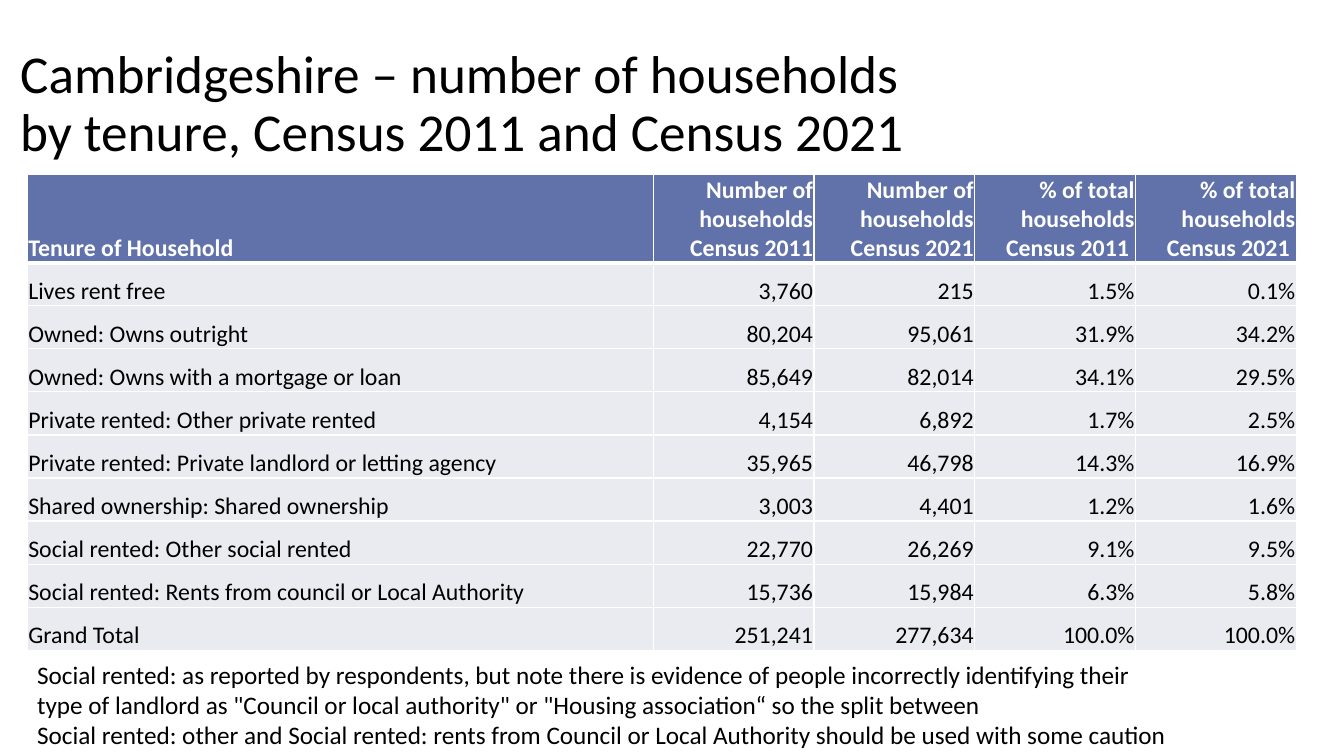
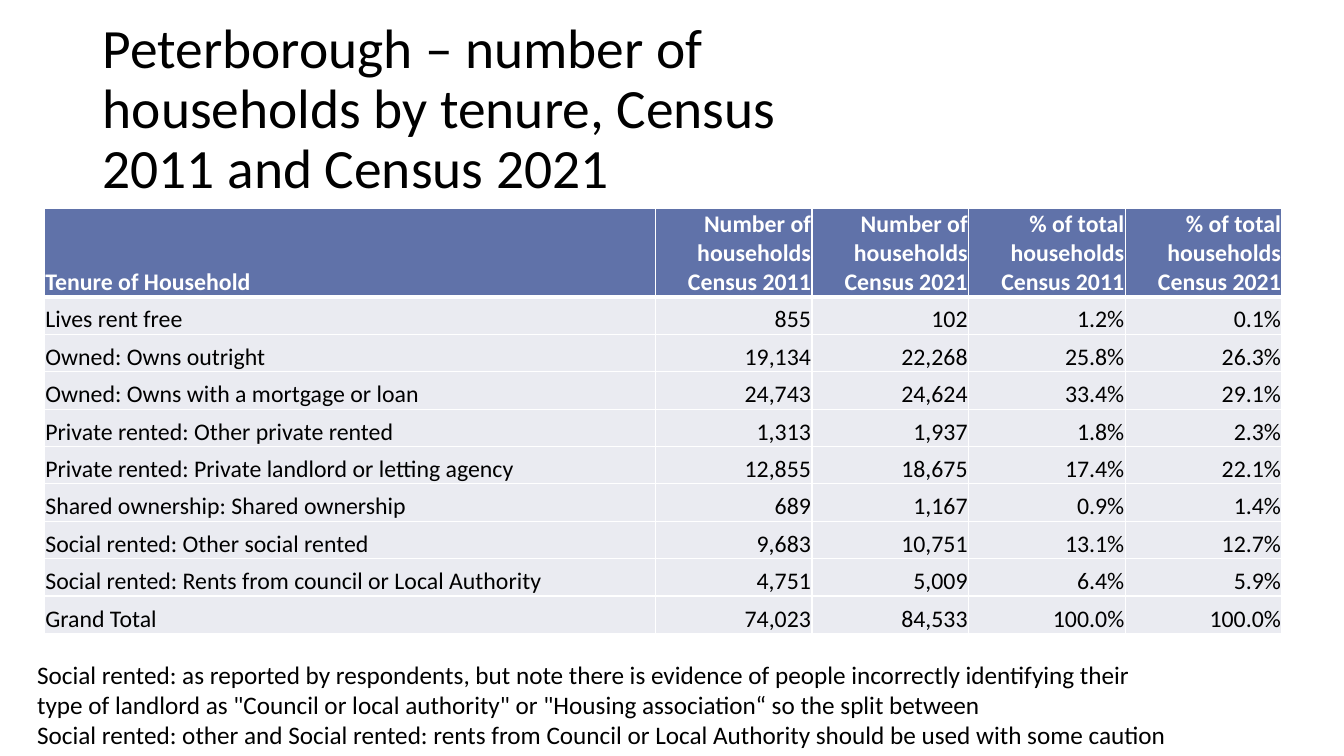
"""Build two slides of household tenure tables from Census 2011 and 2021."""
from pptx import Presentation
from pptx.dml.color import RGBColor
from pptx.enum.text import MSO_ANCHOR, MSO_AUTO_SIZE, PP_ALIGN
from pptx.oxml import parse_xml
from pptx.oxml.ns import nsdecls
from pptx.util import Inches, Pt

HUES = {"head": "6072A9", "body": "EAEBF1", "ink": "000000", "white": "FFFFFF"}
FONT = "Calibri"
TENURES = [
    "Lives rent free",
    "Owned: Owns outright",
    "Owned: Owns with a mortgage or loan",
    "Private rented: Other private rented",
    "Private rented: Private landlord or letting agency",
    "Shared ownership: Shared ownership",
    "Social rented: Other social rented",
    "Social rented: Rents from council or Local Authority",
]
HEADS = [
    "Tenure of Household",
    "Number of households Census 2011",
    "Number of households Census 2021",
    "% of total households Census 2011",
    "% of total households Census 2021",
]
NOTE = """Social rented: as reported by respondents, but note there is evidence of people incorrectly identifying their
type of landlord as "Council or local authority" or "Housing association“ so the split between
Social rented: other and Social rented: rents from Council or Local Authority should be used with some caution"""
AREAS = [
    {
        "name": "Cambridgeshire", "size": 38, "tail": " ",
        "title": (0.75, 3.87, 68.4, 20.13), "spot": (2.03, 23.07),
        "cols": (46.58, 11.96), "rows": (11.33, 5.7),
        "old": [3760, 80204, 85649, 4154, 35965, 3003, 22770, 15736],
        "new": [215, 95061, 82014, 6892, 46798, 4401, 26269, 15984],
    },
    {
        "name": "Peterborough", "size": 39.6, "tail": "",
        "title": (6.9, 4.53, 56.85, 20.13), "spot": (3.3, 27.6),
        "cols": (45.46, 11.66), "rows": (9.87, 4.95),
        "old": [855, 19134, 24743, 1313, 12855, 689, 9683, 4751],
        "new": [102, 22268, 24624, 1937, 18675, 1167, 10751, 5009],
    },
]

deck = Presentation()
deck.slide_width, deck.slide_height = Inches(13.33), Inches(7.5)
COL, ROW = deck.slide_width / 100, deck.slide_height / 100


def ink(para, size, hue="ink", bold=False):
    font = para.font
    for run in para.runs:
        font = run.font
        font.name, font.size, font.bold = FONT, Pt(size), bold
        font.color.rgb = RGBColor.from_string(HUES[hue])


def edge(cell, side, width):
    cell._tc.get_or_add_tcPr().append(parse_xml(
        f'<a:ln{side} {nsdecls("a")} w="{Pt(width)}"><a:solidFill>'
        f'<a:srgbClr val="{HUES["white"]}"/></a:solidFill></a:ln{side}>'))


for area in AREAS:
    slide = deck.slides.add_slide(deck.slide_layouts[5])
    title = slide.shapes.title
    left, top, wide, high = area["title"]
    title.left, title.width = int(left * COL), int(wide * COL)
    title.top, title.height = int(top * ROW), int(high * ROW)
    frame = title.text_frame
    frame.text = f"{area['name']} – number of households by tenure, Census 2011 and Census 2021"
    frame.auto_size = MSO_AUTO_SIZE.NONE
    frame.vertical_anchor = MSO_ANCHOR.MIDDLE
    para = frame.paragraphs[0]
    para.alignment, para.line_spacing = PP_ALIGN.LEFT, 0.9
    ink(para, area["size"])

    sums = sum(area["old"]), sum(area["new"])
    pairs = [*zip(TENURES, area["old"], area["new"]), ("Grand Total", *sums)]
    grid = [HEADS[:3] + [head + area["tail"] for head in HEADS[3:]]]
    for label, old, new in pairs:
        grid.append([label, f"{old:,}", f"{new:,}",
                     f"{old / sums[0]:.1%}", f"{new / sums[1]:.1%}"])

    wides = [area["cols"][0]] + [area["cols"][1]] * 4
    highs = [area["rows"][0]] + [area["rows"][1]] * len(pairs)
    left, top = area["spot"]
    table = slide.shapes.add_table(
        len(grid), len(HEADS), int(left * COL), int(top * ROW),
        int(sum(wides) * COL), int(sum(highs) * ROW)).table
    table.horz_banding = False
    for col, wide in zip(table.columns, wides):
        col.width = int(wide * COL)
    for row, high in zip(table.rows, highs):
        row.height = int(high * ROW)
    for r, texts in enumerate(grid):
        first = r == 0
        for c, text in enumerate(texts):
            cell = table.cell(r, c)
            cell.text = text
            cell.vertical_anchor = MSO_ANCHOR.BOTTOM
            cell.margin_left = cell.margin_right = cell.margin_top = Inches(0.01)
            cell.margin_bottom = 0
            edge(cell, "L", 1)
            edge(cell, "R", 1)
            edge(cell, "T", 3 if r == 1 else 1)
            edge(cell, "B", 3 if first else 1)
            cell.fill.solid()
            cell.fill.fore_color.rgb = RGBColor.from_string(HUES["head" if first else "body"])
            para = cell.text_frame.paragraphs[0]
            para.alignment = PP_ALIGN.RIGHT if c else PP_ALIGN.LEFT
            ink(para, 17, "white" if first else "ink", first)

    note = slide.shapes.add_textbox(
        int(2.03 * COL), int(86.53 * ROW), int(91.37 * COL), int(13.47 * ROW))
    note.text_frame.word_wrap = True
    note.text_frame.text = NOTE
    for para in note.text_frame.paragraphs:
        ink(para, 18)

deck.save("out.pptx")
